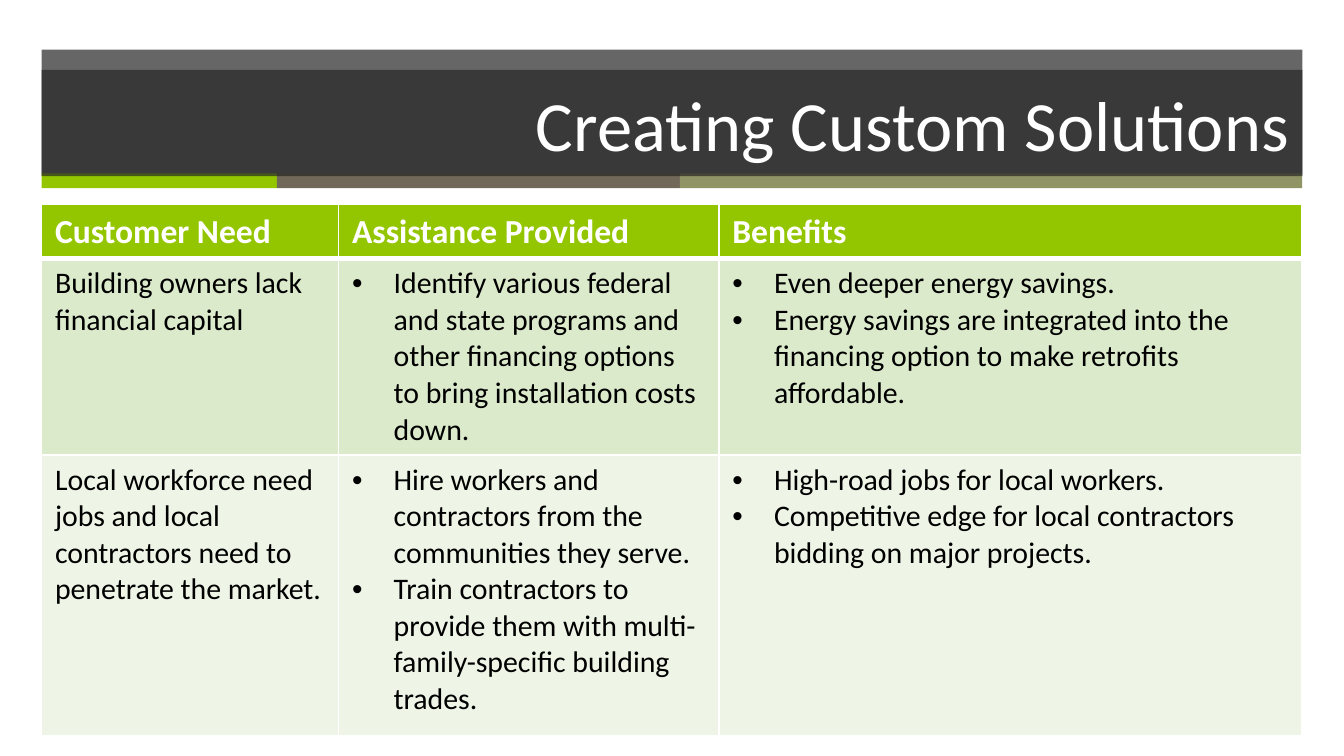
from lxml import etree
from pptx import Presentation
from pptx import util as u
from pptx.dml.color import RGBColor
from pptx.enum import shapes, text
from pptx.oxml.ns import qn

WHITE = RGBColor(0xFF, 0xFF, 0xFF)
BLACK = RGBColor(0x00, 0x00, 0x00)
CHARCOAL = RGBColor(0x26, 0x26, 0x26)
GREEN = RGBColor(0x94, 0xC6, 0x00)
BROWN = RGBColor(0x71, 0x68, 0x5A)
OLIVE = RGBColor(0x90, 0x94, 0x65)
BAND_DARK = RGBColor(0xDC, 0xEA, 0xCC)
BAND_LIGHT = RGBColor(0xEE, 0xF5, 0xE7)

FONT = "Calibri"
LEFT, WIDTH = 0.31, 9.38
COLUMNS = [2.21, 2.83, 4.34]
ROWS = [0.37, 1.34, 2.09]
STRIPES = [(1.75, GREEN), (3, BROWN), (4.63, OLIVE)]
HEADINGS = ["Customer Need", "Assistance Provided", "Benefits"]
SOLUTIONS = [
    (
        ["Building owners lack financial capital"],
        ["Identify various federal and state programs and other financing "
         "options to bring installation costs down."],
        ["Even deeper energy savings.",
         "Energy savings are integrated into the financing option to make "
         "retrofits affordable."],
    ),
    (
        ["Local workforce need jobs and local contractors need to penetrate "
         "the market."],
        ["Hire workers and contractors from the communities they serve.",
         "Train contractors to provide them with multi-family-specific "
         "building trades."],
        ["High-road jobs for local workers.",
         "Competitive edge for local contractors bidding on major projects."],
    ),
]


def write(tf, lines, size=16, color=BLACK, bold=False, align=None, bullet=False):
    """Write one paragraph per line into a text frame."""
    for i, line in enumerate(lines):
        p = tf.paragraphs[0] if i == 0 else tf.add_paragraph()
        if align is not None:
            p.alignment = align
        if bullet:
            pPr = p._p.get_or_add_pPr()
            pPr.set("marL", str(u.Inches(0.31)))
            pPr.set("indent", str(u.Inches(-0.31)))
            etree.SubElement(pPr, qn("a:buFont"), typeface="Arial")
            etree.SubElement(pPr, qn("a:buChar"), char="•")
        r = p.add_run()
        r.text = line
        r.font.name = FONT
        r.font.size = u.Pt(size)
        r.font.bold = bold
        r.font.color.rgb = color


def add_rect(s, x, y, w, h, color, opacity=100):
    """Add a borderless rectangle with an opacity in percent."""
    sp = s.shapes.add_shape(shapes.MSO_SHAPE.RECTANGLE,
                            *map(u.Inches, (x, y, w, h)))
    sp.shadow.inherit = False
    sp.line.fill.background()
    sp.fill.solid()
    sp.fill.fore_color.rgb = color
    if opacity < 100:
        clr = sp._element.spPr.find(qn("a:solidFill"))[0]
        etree.SubElement(clr, qn("a:alpha"), val=str(opacity * 1000))
    return sp


def add_header(s, x, y, w):
    """Draw the title band with its row of coloured stripes."""
    add_rect(s, x, y, w, 0.93, CHARCOAL, 70)
    stripe_x = x
    for stripe_w, color in STRIPES:
        add_rect(s, stripe_x, y + 0.92, stripe_w, 0.11, color)
        stripe_x += stripe_w
    tf = add_rect(s, x, y + 0.15, w, 0.79, CHARCOAL, 70).text_frame
    tf.word_wrap = True
    tf.vertical_anchor = text.MSO_ANCHOR.MIDDLE
    write(tf, ["Creating Custom Solutions"], size=37.8, color=WHITE,
          align=text.PP_ALIGN.RIGHT)


def style_cell(cell, color, top=1, bottom=1):
    """Give a cell white borders and a solid fill."""
    tcPr = cell._tc.get_or_add_tcPr()
    for side, width in (("L", 1), ("R", 1), ("T", top), ("B", bottom)):
        ln = etree.SubElement(tcPr, qn(f"a:ln{side}"), w=str(u.Pt(width)))
        fill = etree.SubElement(ln, qn("a:solidFill"))
        etree.SubElement(fill, qn("a:srgbClr"), val=str(WHITE))
    cell.fill.solid()
    cell.fill.fore_color.rgb = color


def add_solutions_table(s, x, y, w, h):
    """Draw the table of needs, assistance and benefits."""
    table = s.shapes.add_table(len(ROWS), len(COLUMNS),
                               *map(u.Inches, (x, y, w, h))).table
    for column, width in zip(table.columns, COLUMNS):
        column.width = u.Inches(width)
    for row, height in zip(table.rows, ROWS):
        row.height = u.Inches(height)
    for c, heading in enumerate(HEADINGS):
        cell = table.cell(0, c)
        style_cell(cell, GREEN, bottom=3)
        write(cell.text_frame, [heading], size=18, color=WHITE, bold=True)
    for r, solution in enumerate(SOLUTIONS, 1):
        for c, lines in enumerate(solution):
            cell = table.cell(r, c)
            style_cell(cell, BAND_DARK if r % 2 else BAND_LIGHT,
                       top=3 if r == 1 else 1)
            write(cell.text_frame, lines, bullet=c > 0)


def main():
    """Build and save the slide."""
    prs = Presentation()
    prs.slide_width = u.Inches(10)
    prs.slide_height = prs.slide_width * 9 // 16
    s = prs.slides.add_slide(prs.slide_layouts[6])
    add_header(s, LEFT, 0.37, WIDTH)
    add_solutions_table(s, LEFT, 1.52, WIDTH, 3.92)
    prs.save("out.pptx")


if __name__ == "__main__":
    main()
